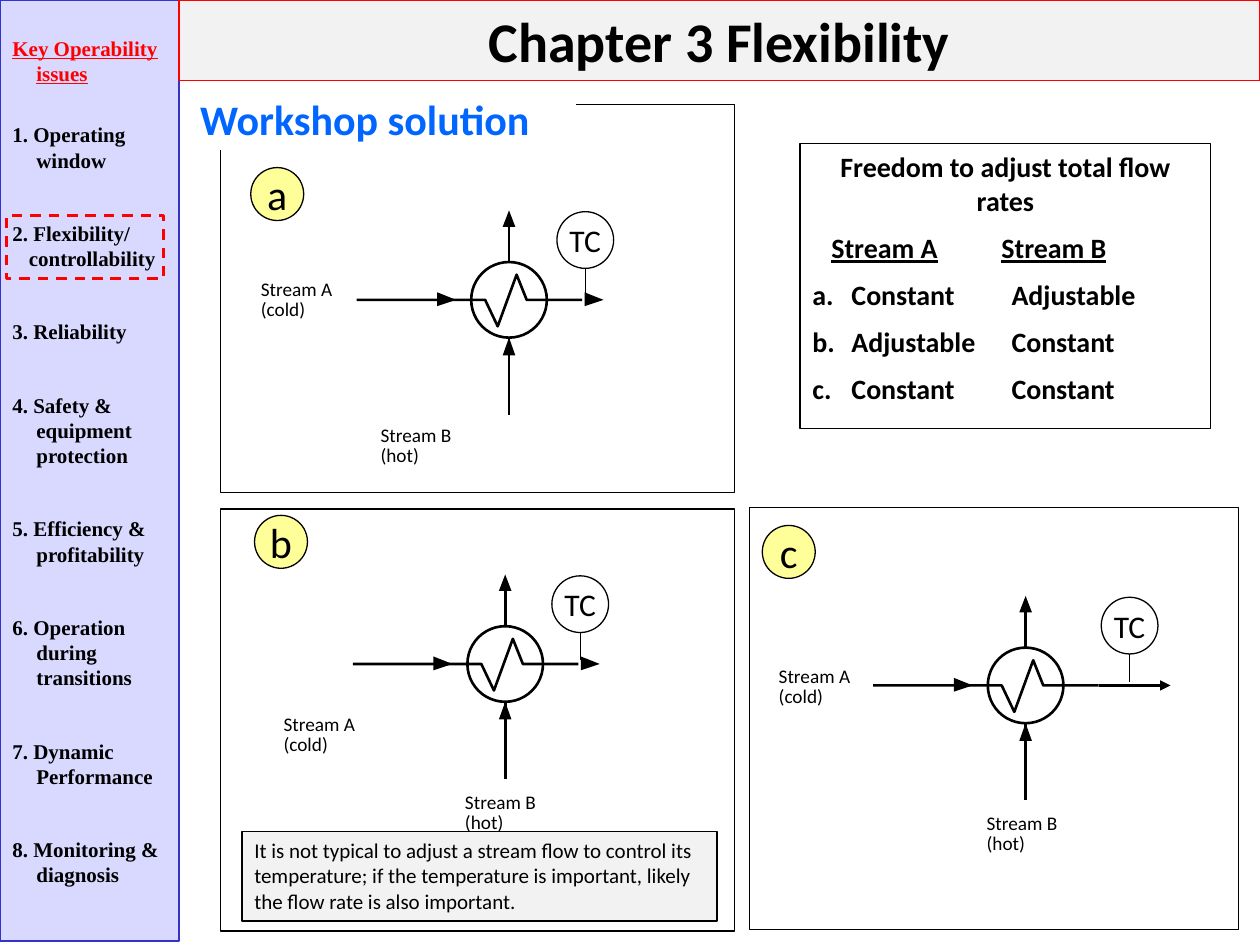
from lxml import etree
from pptx import Presentation
from pptx.dml.color import RGBColor
from pptx.enum.dml import MSO_LINE
from pptx.enum.shapes import MSO_CONNECTOR, MSO_SHAPE
from pptx.enum.text import MSO_ANCHOR, PP_ALIGN
from pptx.oxml.ns import qn
from pptx.util import Inches, Pt

RECT, OVAL = MSO_SHAPE.RECTANGLE, MSO_SHAPE.OVAL
STRAIGHT, DASH = MSO_CONNECTOR.STRAIGHT, MSO_LINE.DASH
TOP, MIDDLE = MSO_ANCHOR.TOP, MSO_ANCHOR.MIDDLE
LEFT, CENTER = PP_ALIGN.LEFT, PP_ALIGN.CENTER
SANS, SERIF = "Calibri", "Times New Roman"

COLORS = {
    "black": "000000", "white": "FFFFFF", "red": "FF0000", "lavender": "D9D9FF",
    "navy": "3333CC", "gray": "F2F2F2", "yellow": "FFFF99", "blue": "0066FF",
}

TITLE = "Chapter 3 Flexibility"
SUBTITLE = "Workshop solution"
NOTE = ("It is not typical to adjust a stream flow to control its temperature; if the "
        "temperature is important, likely the flow rate is also important.")

# text, space before in points, first line indent in inches
ISSUES_HEADING = ("Key Operability issues", 0, -0.19)
ISSUES = [
    ("1. Operating window", 20.7, -0.19),
    ("2. Flexibility/", 27.5, -0.19),
    ("controllability", 0, -0.06),
    ("3. Reliability", 27.5, -0.19),
    ("4. Safety & equipment protection", 27.5, -0.19),
    ("5. Efficiency & profitability", 27.5, -0.19),
    ("6. Operation during transitions", 27.5, -0.19),
    ("7. Dynamic Performance", 27.5, -0.19),
    ("8. Monitoring & diagnosis", 27.5, -0.19),
]

FREEDOM_TITLE = "Freedom to adjust total flow rates"
FREEDOM_HEADER = ("Stream A", "Stream B")
FREEDOM_ROWS = [
    ("a.", "Constant", "Adjustable"),
    ("b.", "Adjustable", "Constant"),
    ("c.", "Constant", "Constant"),
]

STREAM_A, STREAM_B = ("Stream A", "(cold)"), ("Stream B", "(hot)")

# Exchanger is its centre; controller is the offset of the TC circle from it.
PANELS = [
    {"letter": "c", "frame": (5.95, 4.03, 3.88, 3.35), "badge": (6.05, 4.17),
     "exchanger": (8.14, 5.44), "controller": 0.6, "long_outlet": True,
     "stream_a": (6.18, 5.27), "stream_b": (7.83, 6.44)},
    {"letter": "b", "frame": (1.75, 4.04, 4.08, 3.35), "badge": (2.02, 4.09),
     "exchanger": (4.01, 5.27), "controller": 0.37, "long_outlet": False,
     "stream_a": (2.25, 5.65), "stream_b": (3.69, 6.27)},
    {"letter": "a", "frame": (1.75, 0.83, 4.08, 3.08), "badge": (1.99, 1.33),
     "exchanger": (4.04, 2.38), "controller": 0.38, "long_outlet": False,
     "stream_a": (2.07, 2.2), "stream_b": (3.02, 3.36)},
]
STREAM_PATH = [(0.58, 0), (0.14, 0), (0.06, -0.2), (-0.09, 0.21), (-0.19, 0), (-1.21, 0)]
RADIUS = 0.3
HEAD_IN_HOT = [(0, 0.3), (-0.05, 0.44), (0.05, 0.44)]
HEAD_OUT_HOT = [(0, -0.71), (-0.05, -0.58), (0.05, -0.58)]
HEAD_IN_COLD = [(-0.57, 0.05), (-0.57, -0.06), (-0.42, 0)]
HEAD_OUT_COLD = [(0.6, 0.05), (0.6, -0.06), (0.75, 0)]

prs = Presentation()
prs.slide_width, prs.slide_height = Inches(10), Inches(7.5)
slide = prs.slides.add_slide(prs.slide_layouts[6])
shapes = slide.shapes


def color(name):
    return RGBColor.from_string(COLORS[name])


def paint(shape, fill, line, weight=0.75):
    shape.shadow.inherit = False
    if fill:
        shape.fill.solid()
        shape.fill.fore_color.rgb = color(fill)
    else:
        shape.fill.background()
    if line:
        shape.line.color.rgb = color(line)
        shape.line.width = Pt(weight)
    else:
        shape.line.fill.background()


def add_box(kind, box, fill=None, line="black", weight=0.75, anchor=TOP):
    shape = shapes.add_shape(kind, *map(Inches, box))
    paint(shape, fill, line, weight)
    shape.text_frame.word_wrap = kind == RECT
    shape.text_frame.vertical_anchor = anchor
    return shape


def add_paragraph(frame, align=LEFT, before=0):
    first = frame.paragraphs[0]
    paragraph = frame.add_paragraph() if first.runs else first
    paragraph.alignment = align
    paragraph.space_before = Pt(before)
    return paragraph


def write(paragraph, text, size, ink="black", font=SANS, bold=False, underline=False):
    run = paragraph.add_run()
    run.text = text
    run.font.size, run.font.name = Pt(size), font
    run.font.bold, run.font.underline = bold, underline
    run.font.color.rgb = color(ink)


def set_tabs(paragraph, stops):
    tabs = etree.SubElement(paragraph._p.get_or_add_pPr(), qn("a:tabLst"))
    for stop in stops:
        etree.SubElement(tabs, qn("a:tab"), pos=str(Inches(stop)), algn="l")


def add_line(start, end, weight=1.5, arrow=False):
    line = shapes.add_connector(STRAIGHT, *map(Inches, (*start, *end)))
    line.line.color.rgb = color("black")
    line.line.width = Pt(weight)
    properties = line._element.spPr
    if arrow:
        etree.SubElement(properties.find(qn("a:ln")), qn("a:tailEnd"), type="triangle")
    etree.SubElement(properties, qn("a:effectLst"))


def add_outline(center, offsets, closed):
    """Draw a filled arrowhead when closed, otherwise an open stream line."""
    points = [(Inches(center[0] + dx), Inches(center[1] + dy)) for dx, dy in offsets]
    builder = shapes.build_freeform(*points[0])
    builder.add_line_segments(points[1:], close=closed)
    shape = builder.convert_to_shape()
    paint(shape, "black" if closed else None, None if closed else "black", 1.5)


def add_disc(left, top, diameter, text, size, fill=None):
    disc = add_box(OVAL, (left, top, diameter, diameter), fill, anchor=MIDDLE)
    write(add_paragraph(disc.text_frame, CENTER), text, size)


def add_label(left, top, lines):
    for row, text in enumerate(lines):
        box = shapes.add_textbox(*map(Inches, (left, top + 0.16 * row, 0.58, 0.18)))
        frame = box.text_frame
        frame.word_wrap = False
        frame.margin_left = frame.margin_right = frame.margin_top = frame.margin_bottom = 0
        write(add_paragraph(frame), text, 11)


def draw_exchanger(panel):
    x, y = panel["exchanger"]
    add_outline((x, y), STREAM_PATH, False)
    add_line((x, y + 0.91), (x, y + RADIUS))
    add_line((x, y - RADIUS), (x, y - 0.6))
    add_box(OVAL, (x - RADIUS, y - RADIUS, 2 * RADIUS, 2 * RADIUS), weight=1.5)
    heads = [HEAD_IN_HOT, HEAD_OUT_HOT, HEAD_IN_COLD]
    if panel["long_outlet"]:
        add_line((x + 0.58, y), (x + 1.15, y), arrow=True)
    else:
        heads.append(HEAD_OUT_COLD)
    for head in heads:
        add_outline((x, y), head, True)
    left, size = x + panel["controller"], 0.45
    add_disc(left, y - 0.7, size, "TC", 18)
    add_line((left + size / 2, y - 0.25), (left + size / 2, y - 0.03), 0.75)


for panel in PANELS:
    add_box(RECT, panel["frame"], "white")
    draw_exchanger(panel)
    add_label(*panel["stream_a"], STREAM_A)
    add_label(*panel["stream_b"], STREAM_B)
    add_disc(*panel["badge"], 0.42, panel["letter"], 24, "yellow")

sidebar = add_box(RECT, (0, 0, 1.42, 7.47), "lavender", "navy").text_frame
sidebar.margin_top = Inches(0.28)
for issue in [ISSUES_HEADING, *ISSUES]:
    text, before, indent = issue
    heading = issue is ISSUES_HEADING
    paragraph = add_paragraph(sidebar, before=before)
    properties = paragraph._p.get_or_add_pPr()
    properties.set("marL", str(Inches(0.19)))
    properties.set("indent", str(Inches(indent)))
    write(paragraph, text, 12, "red" if heading else "black", SERIF, True, heading)
current_issue = add_box(RECT, (0.05, 1.71, 1.25, 0.5), None, "red", 1.5)
current_issue.line.dash_style = DASH

banner = add_box(RECT, (1.42, 0, 8.58, 0.64), "gray", "red")
write(add_paragraph(banner.text_frame, CENTER), TITLE, 32, bold=True)

freedom = add_box(RECT, (6.35, 1.14, 3.26, 2.26)).text_frame
write(add_paragraph(freedom, CENTER), FREEDOM_TITLE, 16, bold=True)
header = add_paragraph(freedom, before=7.7)
set_tabs(header, (0.15, 1.5))
write(header, "\t", 16, bold=True)
write(header, "\t".join(FREEDOM_HEADER), 16, bold=True, underline=True)
for row in FREEDOM_ROWS:
    paragraph = add_paragraph(freedom, before=7.7)
    set_tabs(paragraph, (0.31, 1.58))
    write(paragraph, "\t".join(row), 16, bold=True)

note = add_box(RECT, (1.92, 6.6, 3.77, 0.71), "gray")
write(add_paragraph(note.text_frame), NOTE, 12)

subtitle = add_box(RECT, (1.49, 0.69, 3.08, 0.5), "white", None)
write(add_paragraph(subtitle.text_frame), SUBTITLE, 24, "blue", bold=True)

prs.save("out.pptx")
